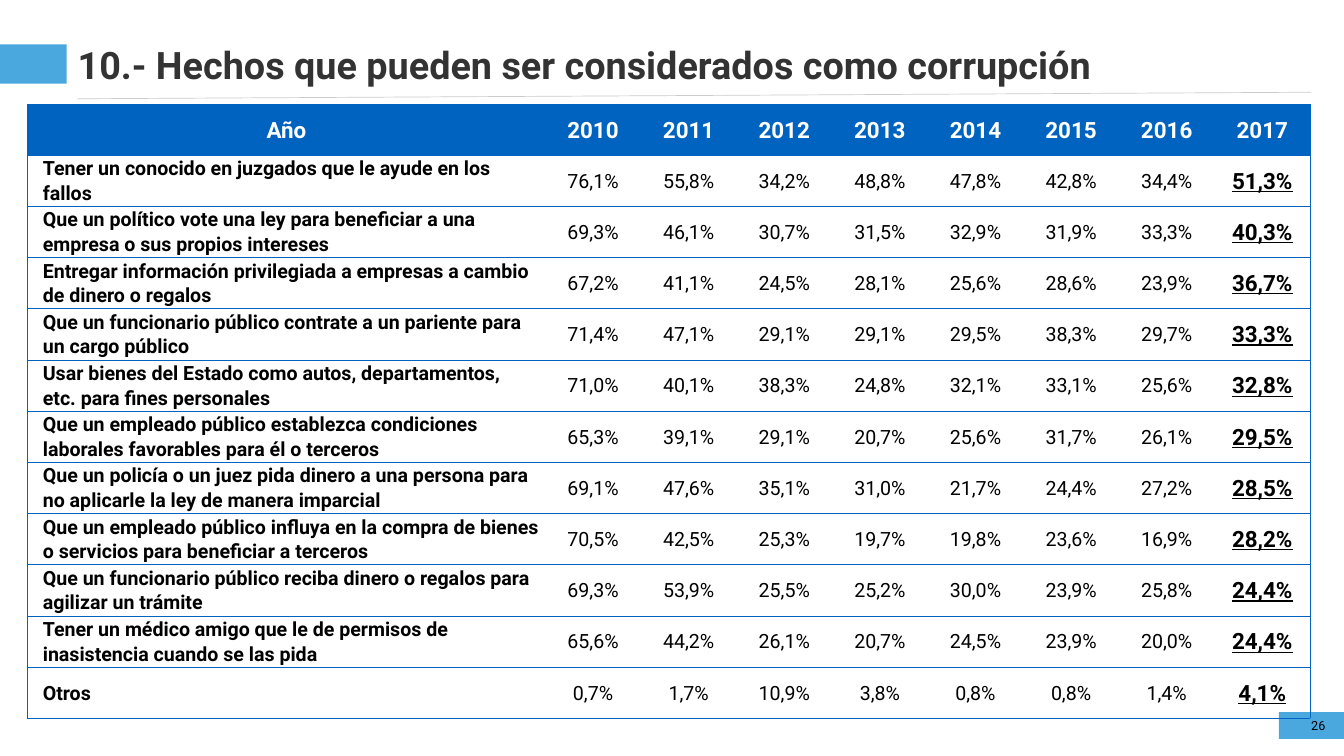
from lxml import etree
from pptx import Presentation
from pptx import util as u
from pptx.dml.color import RGBColor
from pptx.enum import shapes, text
from pptx.oxml.ns import qn

TITLE = "10.- Hechos que pueden ser considerados como corrupción"
PAGE_NUMBER = "26"
HEADINGS = ["Año", *(str(year) for year in range(2010, 2018))]
FACTS = [
    ("Tener un conocido en juzgados que le ayude en los\nfallos",
     "76,1% 55,8% 34,2% 48,8% 47,8% 42,8% 34,4% 51,3%"),
    ("Que un político vote una ley para beneficiar a una\nempresa o sus propios intereses",
     "69,3% 46,1% 30,7% 31,5% 32,9% 31,9% 33,3% 40,3%"),
    ("Entregar información privilegiada a empresas a cambio\nde dinero o regalos",
     "67,2% 41,1% 24,5% 28,1% 25,6% 28,6% 23,9% 36,7%"),
    ("Que un funcionario público contrate a un pariente para\nun cargo público",
     "71,4% 47,1% 29,1% 29,1% 29,5% 38,3% 29,7% 33,3%"),
    ("Usar bienes del Estado como autos, departamentos,\netc. para fines personales",
     "71,0% 40,1% 38,3% 24,8% 32,1% 33,1% 25,6% 32,8%"),
    ("Que un empleado público establezca condiciones\nlaborales favorables para él o terceros",
     "65,3% 39,1% 29,1% 20,7% 25,6% 31,7% 26,1% 29,5%"),
    ("Que un policía o un juez pida dinero a una persona para\nno aplicarle la ley de manera imparcial",
     "69,1% 47,6% 35,1% 31,0% 21,7% 24,4% 27,2% 28,5%"),
    ("Que un empleado público influya en la compra de bienes\no servicios para beneficiar a terceros",
     "70,5% 42,5% 25,3% 19,7% 19,8% 23,6% 16,9% 28,2%"),
    ("Que un funcionario público reciba dinero o regalos para\nagilizar un trámite",
     "69,3% 53,9% 25,5% 25,2% 30,0% 23,9% 25,8% 24,4%"),
    ("Tener un médico amigo que le de permisos de\ninasistencia cuando se las pida",
     "65,6% 44,2% 26,1% 20,7% 24,5% 23,9% 20,0% 24,4%"),
    ("Otros", "0,7% 1,7% 10,9% 3,8% 0,8% 0,8% 1,4% 4,1%"),
]

FONT = "Roboto"
BLUE = RGBColor(0x00, 0x63, 0xBF)
SKY = RGBColor(0x4B, 0xA8, 0xDF)
GREY = RGBColor(0xCB, 0xCB, 0xCB)
DARK = RGBColor(0x33, 0x33, 0x33)
BLACK = RGBColor(0, 0, 0)
WHITE = RGBColor(0xFF, 0xFF, 0xFF)

WIDTH, HEIGHT = 26.67, 15
TABLE_LEFT, TABLE_TOP, TABLE_WIDTH, TABLE_HEIGHT = 0.55, 2.06, 25.45, 12.19
FACT_WIDTH = 10.27
YEAR_WIDTH = (TABLE_WIDTH - FACT_WIDTH) / (len(HEADINGS) - 1)
ROW_HEIGHT = TABLE_HEIGHT / (len(FACTS) + 1)
TITLE_LEFT = 1.54
NO_STYLE = "{2D5ABB26-0587-4C30-8999-92F81FD0307C}"


def inches(*lengths):
    return [u.Inches(length) for length in lengths]


def style(frame, size, color, bold=False, underline=False):
    for paragraph in frame.paragraphs:
        for run in paragraph.runs:
            font = run.font
            font.name, font.size, font.bold = FONT, u.Pt(size), bold
            font.color.rgb = color
            if underline:
                font.underline = True


def add_band(slide, *box):
    band = slide.shapes.add_shape(shapes.MSO_SHAPE.RECTANGLE, *inches(*box))
    band.shadow.inherit = False
    band.fill.solid()
    band.fill.fore_color.rgb = SKY
    band.line.fill.background()


def add_label(slide, words, box, size, color, bold=False):
    frame = slide.shapes.add_textbox(*inches(*box)).text_frame
    frame.margin_left = frame.margin_right = frame.margin_top = frame.margin_bottom = 0
    frame.word_wrap = True
    frame.vertical_anchor = text.MSO_ANCHOR.MIDDLE
    frame.text = words
    style(frame, size, color, bold)
    return frame.paragraphs[0]


def add_borders(cell, sides):
    """Draw blue edges on the named sides (of L, R, T, B), none on the others."""
    properties = cell._tc.get_or_add_tcPr()
    for position, side in enumerate("LRTB"):
        edge = etree.Element(qn(f"a:ln{side}"), w=str(u.Pt(0.75)))
        if side in sides:
            fill = etree.SubElement(edge, qn("a:solidFill"))
            etree.SubElement(fill, qn("a:srgbClr"), val=str(BLUE))
        else:
            etree.SubElement(edge, qn("a:noFill"))
        properties.insert(position, edge)


def fill_cell(cell, words, row, column):
    header, fact, latest = row == 0, column == 0, column == len(HEADINGS) - 1
    cell.margin_left = cell.margin_right = u.Inches(0.05)
    cell.margin_top = cell.margin_bottom = 0
    cell.vertical_anchor = text.MSO_ANCHOR.MIDDLE
    frame = cell.text_frame
    frame.text = words
    for paragraph in frame.paragraphs:
        paragraph.line_spacing = 1.07
        if fact and not header:
            paragraph.level = 1
            paragraph._p.get_or_add_pPr().set("marL", "0")
            paragraph._p.get_or_add_pPr().set("indent", str(u.Inches(0.25)))
        else:
            paragraph.alignment = text.PP_ALIGN.CENTER
    style(frame, 32 if header or latest else 28, WHITE if header else BLACK,
          bold=header or fact or latest, underline=latest and not header)
    if header:
        cell.fill.solid()
        cell.fill.fore_color.rgb = BLUE
    else:
        cell.fill.background()
    add_borders(cell, "TB" + "L" * fact + "R" * latest)


def add_facts_table(slide):
    rows = [HEADINGS] + [[fact, *shares.split()] for fact, shares in FACTS]
    widths = [FACT_WIDTH] + [YEAR_WIDTH] * (len(HEADINGS) - 1)
    frame = slide.shapes.add_table(len(rows), len(widths), *inches(
        TABLE_LEFT, TABLE_TOP, TABLE_WIDTH, TABLE_HEIGHT))
    table = frame.table
    table.horz_banding = table.first_row = False
    table._tbl.tblPr.find(qn("a:tableStyleId")).text = NO_STYLE
    for column, width in zip(table.columns, widths):
        column.width = u.Inches(width)
    for r, row in enumerate(rows):
        table.rows[r].height = u.Inches(ROW_HEIGHT)
        for c, words in enumerate(row):
            fill_cell(table.cell(r, c), words, r, c)


def main():
    deck = Presentation()
    deck.slide_width, deck.slide_height = inches(WIDTH, HEIGHT)
    slide = deck.slides.add_slide(deck.slide_layouts[6])

    add_label(slide, TITLE, (TITLE_LEFT, 0.82, 24.84, 0.91), 54, DARK, bold=True)
    add_band(slide, 0, 0.88, 1.32, 0.78)
    add_band(slide, 25.38, 14.13, WIDTH - 25.38, 0.53)
    rule = slide.shapes.add_connector(shapes.MSO_CONNECTOR.STRAIGHT,
                                      *inches(TITLE_LEFT, 1.96, 26.02, 1.83))
    rule.line.color.rgb = GREY
    rule.line.width = u.Pt(1)
    etree.SubElement(rule._element.spPr, qn("a:effectLst"))
    number = add_label(slide, PAGE_NUMBER, (25.9, 14.24, 0.4, 0.3), 18, BLACK)
    number.alignment = text.PP_ALIGN.RIGHT
    add_facts_table(slide)
    deck.save("out.pptx")


if __name__ == "__main__":
    main()
